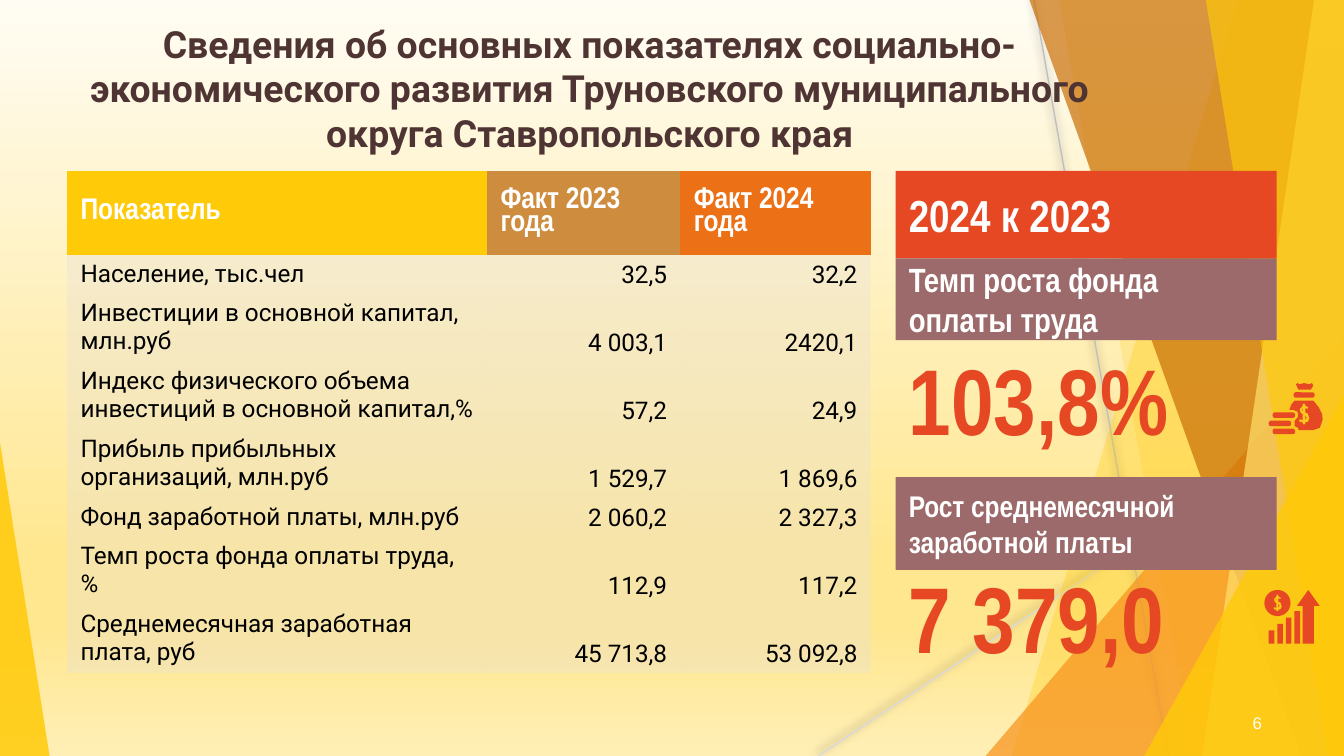
from math import cos, pi, sin
from pptx import Presentation, util as u
from pptx.dml.color import RGBColor
from pptx.enum import shapes as sh, text as tx
from pptx.oxml import parse_xml
from pptx.oxml.ns import nsdecls, qn

THEME = {
    "title": ("Roboto", 20, "4F3434", True), "head": ("Arial Narrow", 16, "FFFFFF", True),
    "body": ("Roboto", 13, "000000", False), "big": ("Arial Narrow", 50, "E64823", True),
    "top": ("Arial Narrow", 24, "FFFFFF", True), "mid": ("Arial Narrow", 18, "FFFFFF", True),
    "num": ("Arial", 9, "FFFFFF", False),
    "red": "E64823", "mauve": "9C6A6A", "cell": "E5DEDB", "heads": ("FFCA08", "CE8D3E", "EC7016"),
    "sky": ((0, "FFFCF3"), (74, "FFE790"), (83, "FFE790"), (100, "FFEFB5")),
}
W, H = 720, 405
TITLE = ("Сведения об основных показателях социально-экономического развития "
         "Труновского муниципального округа Ставропольского края")
HEADS = ("Показатель", "Факт 2023 года", "Факт 2024 года")
ROWS = [
    ("Население, тыс.чел", "32,5", "32,2", 1),
    ("Инвестиции в основной капитал, млн.руб", "4 003,1", "2420,1", 2),
    ("Индекс физического объема инвестиций в основной капитал,%", "57,2", "24,9", 2),
    ("Прибыль прибыльных организаций, млн.руб", "1 529,7", "1 869,6", 2),
    ("Фонд заработной платы, млн.руб", "2 060,2", "2 327,3", 1),
    ("Темп роста фонда оплаты труда, %", "112,9", "117,2", 2),
    ("Среднемесячная заработная плата, руб", "45 713,8", "53 092,8", 2),
]
COLS = (225, 103.5, 102)
CARDS = [
    ("2024 к 2023", 91.6, 46.8, "top", "red"),
    ("Темп роста фонда оплаты труда", 138.4, 43.9, "mid", "mauve"),
    ("103,8%", 171.4, 84.2, "big", None),
    ("Рост среднемесячной заработной платы", 255.6, 49.7, "head", "mauve"),
    ("7 379,0", 288, 84.2, "big", None),
]
RAYS = [((554, 0), (626, H)), ((W, 217.5), (438.5, H))]
RAY_INK = ("BFBFBF", "D9D9D9")
FACETS = [
    ("quad", (663, 542), "FFCA08", 30), ("quad", (567.5, 639), "FFCA08", 20),
    ("tri", (528, 180, 192, 225, 1), "F8931D", 72), ("quad", (551.5, 697), "CA6F06", 70),
    ("quad", (704, 644), "FFDF6B", 70), ("quad", (646, 711), "FFCA08", 65),
    ("tri", (613, 211.5, 107, 193.5, 1), "FFCA08", 80),
    ("tri", (0, 237, 26.6, 168, 0), "FFCA08", 85),
]
DOLLAR = [
    [(0, -5.8), (.7, -5), (.7, -4.5), (2.2, -3.6), (2.2, -2.9), (1.4, -2.9), (.7, -3.1), (.7, -.8),
     (2, -.4), (2.9, 2.2), (2.2, 4.1), (.7, 4.5), (.7, 5.2), (0, 5.8), (-.7, 5.2), (-.7, 4.5),
     (-2.4, 4.2), (-2.6, 3), (-1.6, 2.8), (-.7, 3.4), (-.7, .1), (-1.8, -.6), (-2.4, -2.6),
     (-.7, -4.4), (-.7, -5.2)],
    [(-.7, -2.9), (-1.1, -2.1), (-.7, -1.5)],
    [(.7, .8), (.7, 2.9), (1.4, 2)],
]
BAG = [(-5, -7.2), (-6.6, -5.4), (-7.9, -2.2), (-5.8, -2.2), (-3.4, -1.2), (-3.2, 1.6), (-5, 3.6),
       (-5, 6.5), (-3.2, 7.4), (-2.9, 8.6), (5, 8.6), (8.5, 7.4), (10, 3), (9.7, 0), (7.9, -3.6),
       (5, -7.2)]
NECK = [(-4.3, -15.9), (-3.6, -16.6), (-2.2, -15.9), (0, -16.6), (2.9, -15.9), (4.3, -16.6),
        (5, -15.2), (3.6, -13), (-2.9, -13)]
PILLS = [(693, 210.2, 11.2), (681.8, 221, 12), (679.7, 225.4, 12), (681.8, 229.7, 12)]

deck = Presentation()
deck.slide_width, deck.slide_height = u.Pt(W), u.Pt(H)
slide = deck.slides.add_slide(deck.slide_layouts[6])
pool = slide.shapes


def paint(fill, ink, root, alpha=100):
    fill.solid()
    fill.fore_color.rgb = RGBColor.from_string(ink)
    if alpha < 100:
        tint = root.find(".//" + qn("a:srgbClr"))
        tint.append(parse_xml(f'<a:alpha {nsdecls("a")} val="{alpha * 1000}"/>'))


def plain(shape, ink, alpha=100):
    shape.shadow.inherit = False
    shape.line.fill.background()
    paint(shape.fill, ink, shape._element, alpha)
    return shape


def block(kind, x, y, w, h, ink, alpha=100):
    return plain(pool.add_shape(kind, u.Pt(x), u.Pt(y), u.Pt(w), u.Pt(h)), ink, alpha)


def outline(loops, ink, alpha=100, x=0, y=0):
    loops = [[(u.Pt(x + a), u.Pt(y + b)) for a, b in loop] for loop in loops]
    pen = pool.build_freeform(*loops[0][0])
    for i, loop in enumerate(loops):
        if i:
            pen.move_to(*loop[0])
        pen.add_line_segments(loop[1:], close=True)
    return plain(pen.convert_to_shape(), ink, alpha)


def write(frame, words, style, align=tx.PP_ALIGN.LEFT):
    para = frame.paragraphs[0]
    para.text, para.alignment = words, align
    font = para.font
    font.name, size, ink, font.bold = THEME[style]
    font.size, font.color.rgb = u.Pt(size), RGBColor.from_string(ink)
    return para


def label(shape, words, style, pad=7.2, align=tx.PP_ALIGN.LEFT):
    frame = shape.text_frame
    frame.word_wrap, frame.vertical_anchor = True, tx.MSO_ANCHOR.MIDDLE
    frame.margin_left = frame.margin_right = u.Pt(7.2)
    frame.margin_top = frame.margin_bottom = u.Pt(pad)
    write(frame, words, style, align)


def box(x, y, w, h):
    return pool.add_textbox(u.Pt(x), u.Pt(y), u.Pt(w), u.Pt(h))


def scene():
    fill = slide.background.fill
    fill.gradient()
    fill.gradient_angle = 270
    stops = fill._fill._gradFill.find(qn("a:gsLst"))
    for stop in list(stops):
        stops.remove(stop)
    for at, ink in THEME["sky"]:
        stops.append(parse_xml(f'<a:gs {nsdecls("a")} pos="{at * 1000}"><a:srgbClr val="{ink}"/></a:gs>'))
    for (start, end), ink in zip(RAYS, RAY_INK):
        ray = pool.add_connector(sh.MSO_CONNECTOR.STRAIGHT, *map(u.Pt, start + end))
        ray.line.width, ray.line.color.rgb = u.Pt(.75), RGBColor.from_string(ink)
        ray._element.spPr.append(parse_xml(
            f'<a:effectLst {nsdecls("a")}><a:outerShdw blurRad="63500" dist="25400" dir="14700000">'
            '<a:srgbClr val="000000"><a:alpha val="50000"/></a:srgbClr></a:outerShdw></a:effectLst>'))
    for kind, spots, ink, alpha in FACETS:
        if kind == "quad":
            top, low = spots
            outline([[(top, 0), (W, 0), (W, H), (low, H)]], ink, alpha)
        else:
            tri = block(sh.MSO_SHAPE.ISOSCELES_TRIANGLE, *spots[:4], ink, alpha)
            tri.adjustments[0] = spots[4]


def grid():
    tall = [44.6] + [5.2 + 15.2 * row[3] for row in ROWS]
    table = pool.add_table(len(tall), 3, u.Pt(36), u.Pt(91.6), u.Pt(sum(COLS)), u.Pt(sum(tall))).table
    table.first_row = table.horz_banding = False
    table._tbl.tblPr.find(qn("a:tableStyleId")).text = "{2D5ABB26-0587-4C30-8999-92F81FD0307C}"
    for col, wide in zip(table.columns, COLS):
        col.width = u.Pt(wide)
    for r, words in enumerate([HEADS] + [row[:3] for row in ROWS]):
        table.rows[r].height = u.Pt(tall[r])
        for c, word in enumerate(words):
            cell = table.cell(r, c)
            paint(cell.fill, THEME["cell"] if r else THEME["heads"][c], cell._tc, 32 if r else 100)
            cell.margin_left = cell.margin_right = u.Pt(7.2)
            cell.margin_top = cell.margin_bottom = u.Pt(2.6 if r else 7.2)
            if r:
                cell.vertical_anchor = tx.MSO_ANCHOR.BOTTOM if c else tx.MSO_ANCHOR.TOP
                write(cell.text_frame, word, "body", tx.PP_ALIGN.RIGHT if c else tx.PP_ALIGN.LEFT)
            else:
                cell.vertical_anchor = tx.MSO_ANCHOR.MIDDLE
                write(cell.text_frame, word, "head").line_spacing = .8


def cards():
    for words, y, h, style, ink in CARDS:
        spot = (479.8, y, 204.2, h)
        card = block(sh.MSO_SHAPE.RECTANGLE, *spot, THEME[ink]) if ink else box(*spot)
        label(card, words, style)


def icons():
    red = THEME["red"]
    arrow = block(sh.MSO_SHAPE.UP_ARROW, 694.8, 316.1, 12.2, 28.8, red)
    arrow.adjustments[0], arrow.adjustments[1] = .5, .7
    for i in range(4):
        h = 7.2 + 3.4 * i
        block(sh.MSO_SHAPE.RECTANGLE, 679.7 + 4.6 * i, 344.9 - h, 3, h, red)
    ring = [(7 * cos(i * pi / 20), 7 * sin(i * pi / 20)) for i in range(40)]
    small = [[(.8 * a, .8 * b) for a, b in loop] for loop in DOLLAR]
    outline([ring] + small, red, x=684.4, y=323.1)
    outline([BAG] + DOLLAR, red, x=698.6, y=221.8)
    outline([NECK], red, x=698.6, y=221.8)
    for x, y, w in PILLS:
        block(sh.MSO_SHAPE.ROUNDED_RECTANGLE, x, y, w, 2.9, red).adjustments[0] = .4


def main():
    """Build the slide of district indicators and save it."""
    scene()
    label(box(36, 32.4, 560, 29.5), TITLE, "title", align=tx.PP_ALIGN.CENTER)
    grid()
    cards()
    icons()
    label(box(664, 376.6, 40.3, 21.6), "6", "num", 3.6)
    deck.save("out.pptx")


if __name__ == "__main__":
    main()
